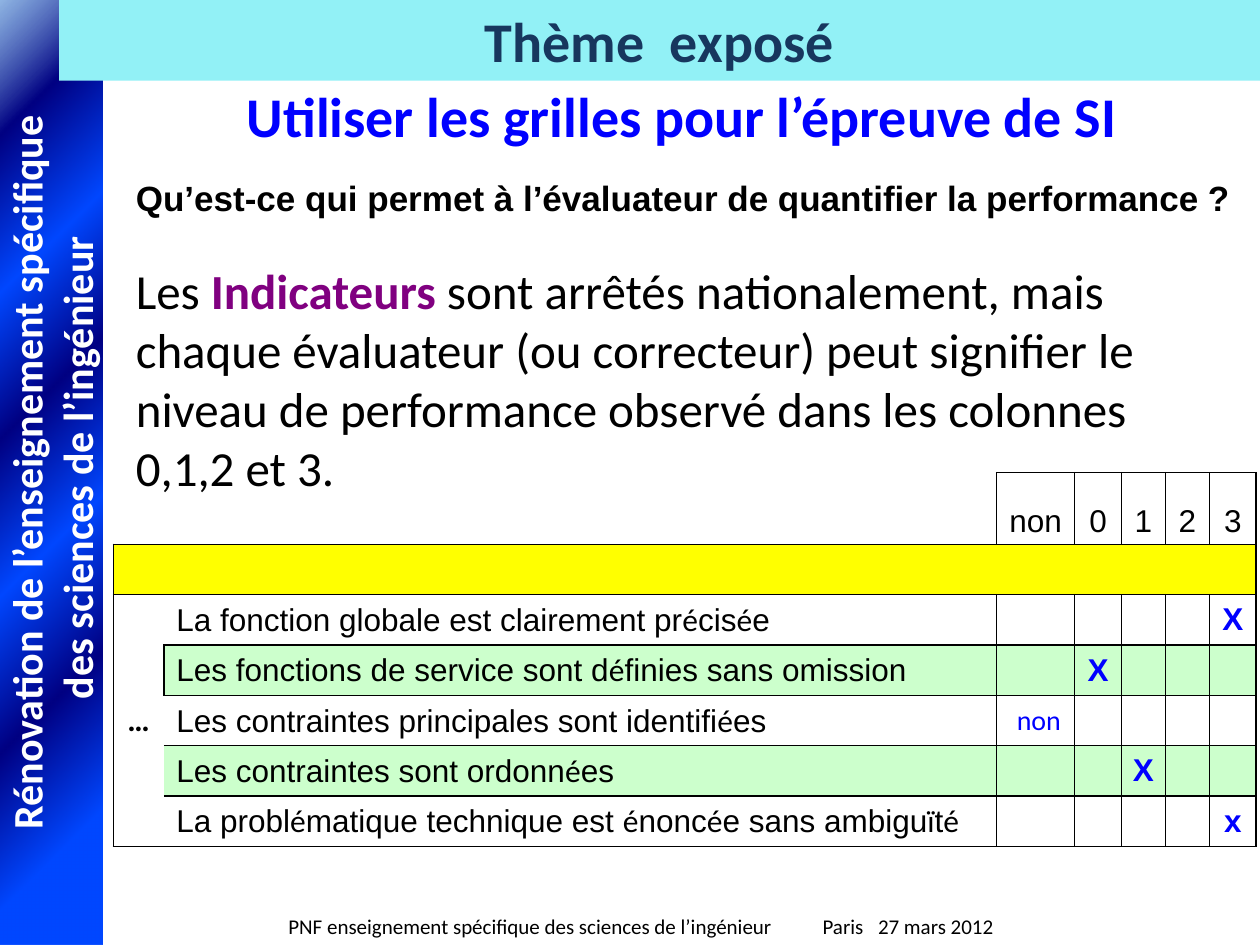
from dataclasses import dataclass
from itertools import groupby

from lxml import etree
from pptx import Presentation
from pptx.dml.color import RGBColor
from pptx.enum.shapes import MSO_SHAPE
from pptx.enum.text import MSO_ANCHOR, PP_ALIGN
from pptx.oxml.ns import qn
from pptx.util import Inches, Pt

RECT = MSO_SHAPE.RECTANGLE
TOP, MID, LOW = MSO_ANCHOR.TOP, MSO_ANCHOR.MIDDLE, MSO_ANCHOR.BOTTOM
LEFT, MIDDLE = PP_ALIGN.LEFT, PP_ALIGN.CENTER
WIDE, HIGH = Inches(10), Inches(7.5)


@dataclass(frozen=True)
class Theme:
    body: str = "Calibri"
    grid: str = "Arial"
    black: str = "000000"
    white: str = "FFFFFF"
    blue: str = "0000FF"
    navy: str = "17375E"
    aqua: str = "92F1F6"
    plum: str = "800080"
    yellow: str = "FFFF00"
    green: str = "CCFFCC"
    bright: str = "0047FF"
    deep: str = "000082"
    sky: str = "558ED5"
    title: int = 32
    text: int = 28
    side: int = 24
    ask: int = 20
    cell: int = 18
    note: int = 16
    foot: int = 12


T = Theme()

# Table content: label, marked column, mark
HEADS = ["non", "0", "1", "2", "3"]
ROWS = [
    ("La fonction globale est clairement précisée", 6, "X"),
    ("Les fonctions de service sont définies sans omission", 3, "X"),
    ("Les contraintes principales sont identifiées", 2, " non"),
    ("Les contraintes sont ordonnées", 4, "X"),
    ("La problématique technique est énoncée sans ambiguïté", 6, "x"),
]
# Shares of the slide's width and height, in percent
COLS = [4, 66.1, 6.2, 3.7, 3.5, 3.5, 3.7]
TALLS = [7.6] + [5.33] * 6


def across(share):
    return int(WIDE * share / 100)


def down(share):
    return int(HIGH * share / 100)


def area(x, y, w, h):
    return across(x), down(y), across(w), down(h)


def style(font, size, color, bold=False, face=T.body):
    font.name, font.size, font.bold = face, Pt(size), bold
    font.color.rgb = RGBColor.from_string(color)


def write(para, text, size, color, bold=False, face=T.body, align=LEFT):
    para.alignment = align
    style(para.font, size, color, bold, face)
    run = para.add_run()
    run.text = text
    return run


def label(slide, place, text, size, color=T.black, **look):
    frame = slide.shapes.add_textbox(*area(*place)).text_frame
    frame.word_wrap = True
    para = frame.paragraphs[0]
    write(para, text, size, color, **look)
    return para


def block(slide, place):
    shape = slide.shapes.add_shape(RECT, *area(*place))
    shape.shadow.inherit = False
    shape.line.fill.background()
    shape.text_frame.word_wrap = True
    shape.text_frame.vertical_anchor = MID
    return shape


def shade(shape):
    """Radial bands that start from the bottom right corner."""
    shape.fill.gradient()
    grad = shape._element.spPr.find(qn("a:gradFill"))
    grad.clear()
    stops = etree.SubElement(grad, qn("a:gsLst"))
    bands = list(zip([13, 28, 43, 58, 72, 87], [T.bright, T.deep] * 3))
    for spot, color in bands + [(100, T.sky), (100, T.bright)]:
        stop = etree.SubElement(stops, qn("a:gs"), pos=str(spot * 1000))
        tint = etree.SubElement(stop, qn("a:srgbClr"), val=color)
        if color == T.sky:
            etree.SubElement(tint, qn("a:alpha"), val="65000")
    course = etree.SubElement(grad, qn("a:path"), path="circle")
    etree.SubElement(course, qn("a:fillToRect"), l="100000", t="100000")


def tabs(para, *stops):
    props = para._p.get_or_add_pPr()
    group = etree.Element(qn("a:tabLst"))
    props.insert(0, group)
    for stop in stops:
        etree.SubElement(group, qn("a:tab"), pos=str(across(stop)), algn="l")


def sides(row, col):
    """Sides of a cell that carry a line."""
    if row == 0:
        return {0: "B", 1: "RB"}.get(col, "LRTB")
    if row == 1:
        return {0: "LRTB", 6: "RTB"}.get(col, "TB")
    if col == 0:
        return {2: "LTB", 6: "LB"}.get(row, "L")
    return "RTB" if col == 1 and row != 3 else "LRTB"


def dress(cell, row, col):
    """Borders, fill and margins of a cell."""
    props = cell._tc.get_or_add_tcPr()
    for side in "LRTB":
        line = etree.SubElement(props, qn("a:ln" + side), w=str(Pt(1)))
        if side in sides(row, col):
            fill = etree.SubElement(line, qn("a:solidFill"))
            etree.SubElement(fill, qn("a:srgbClr"), val=T.black)
        else:
            etree.SubElement(line, qn("a:noFill"))
    tint = T.yellow if row == 1 else T.green if row in (3, 5) and col else None
    if tint:
        cell.fill.solid()
        cell.fill.fore_color.rgb = RGBColor.from_string(tint)
    else:
        cell.fill.background()
    cell.margin_left = cell.margin_right = Inches(0.1 if col == 1 else 0.05)
    cell.margin_top = cell.margin_bottom = Inches(0.04)
    cell.vertical_anchor = LOW if row == 0 or col == 1 else MID


def put(cell, text, size=T.cell, color=T.black, bold=False, face=T.grid):
    write(cell.text_frame.paragraphs[0], text, size, color, bold, face, MIDDLE)


def spell(cell, text):
    """Accented letters take the body face."""
    para = cell.text_frame.paragraphs[0]
    style(para.font, T.cell, T.black, face=T.grid)
    for accent, part in groupby(text, lambda sign: sign in "éï"):
        run = para.add_run()
        run.text = "".join(part)
        if accent:
            run.font.name = T.body


def chart(slide):
    place = area(9, 50, sum(COLS), sum(TALLS))
    table = slide.shapes.add_table(len(TALLS), len(COLS), *place).table
    table.first_row = table.horz_banding = False
    for col, share in zip(table.columns, COLS):
        col.width = across(share)
    for row, share in zip(table.rows, TALLS):
        row.height = down(share)
    for row in range(len(TALLS)):
        for col in range(len(COLS)):
            dress(table.cell(row, col), row, col)
    table.cell(1, 0).merge(table.cell(1, 6))
    table.cell(2, 0).merge(table.cell(6, 0))
    put(table.cell(2, 0), "…", bold=True, face=T.body)
    for col, head in enumerate(HEADS, 2):
        put(table.cell(0, col), head)
    for row, (text, col, mark) in enumerate(ROWS, 2):
        spell(table.cell(row, 1), text)
        if col == 2:
            put(table.cell(row, col), mark, T.note, T.blue, face=T.body)
        else:
            put(table.cell(row, col), mark, color=T.blue, bold=True)


def main():
    deck = Presentation()
    deck.slide_width, deck.slide_height = WIDE, HIGH
    slide = deck.slides.add_slide(deck.slide_layouts[6])

    # Side band with upright text
    band = block(slide, (0, 0, 8.1, 100))
    shade(band)
    frame = band.text_frame
    frame.margin_left = frame.margin_right = 0
    frame.margin_top = frame.margin_bottom = 0
    frame._txBody.bodyPr.set("vert", "vert270")
    lines = ["Rénovation de l’enseignement spécifique", " des sciences de l’ingénieur"]
    for para, line in zip([frame.paragraphs[0], frame.add_paragraph()], lines):
        write(para, line, T.side, T.white, True, align=MIDDLE)

    # Banner
    top = block(slide, (4.7, 0, 95.3, 8.53))
    top.fill.solid()
    top.fill.fore_color.rgb = RGBColor.from_string(T.aqua)
    write(top.text_frame.paragraphs[0], "Thème  exposé", T.title, T.navy, True, align=MIDDLE)

    # Footer
    foot = label(slide, (21.9, 96, 67.2, 4), "PNF enseignement spécifique des sciences "
                 "de l’ingénieur\tParis\t27 mars 2012", T.foot)
    tabs(foot, 42.4, 46.8)

    # Heading, question and answer
    label(slide, (9.8, 18, 90.2, 5.73), "Qu’est-ce qui permet à l’évaluateur de "
          "quantifier la performance ?", T.ask, bold=True, face=T.grid)
    label(slide, (8.3, 8, 91.7, 8.4), "Utiliser les grilles pour l’épreuve de SI",
          T.title, T.blue, bold=True, align=MIDDLE)
    para = label(slide, (9.8, 26.93, 88.6, 26.27), "Les ", T.text)
    key = para.add_run()
    key.text = "Indicateurs"
    style(key.font, T.text, T.plum, True)
    para.add_run().text = (" sont arrêtés nationalement, mais chaque évaluateur (ou correcteur) "
                           "peut signifier le niveau de performance observé dans les colonnes "
                           "0,1,2 et 3.")

    # Grid of indicators
    chart(slide)
    deck.save("out.pptx")


if __name__ == "__main__":
    main()
